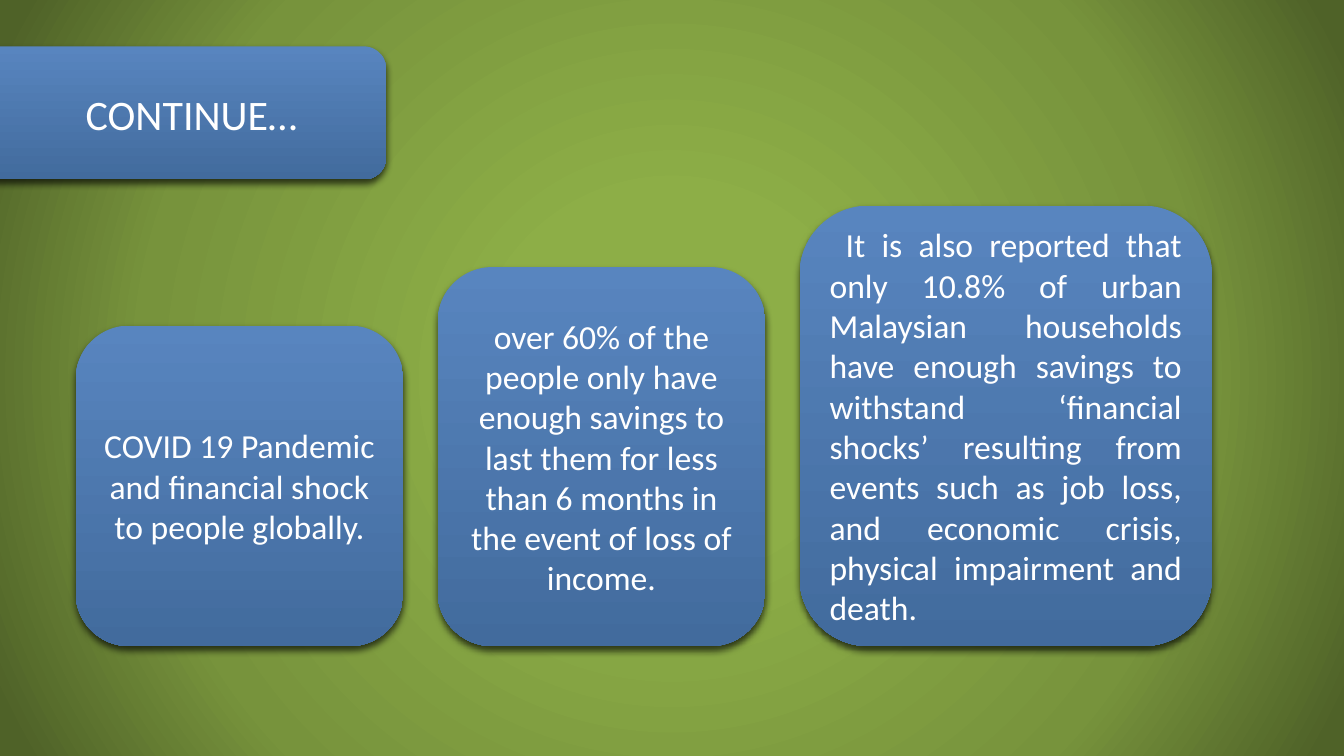
"""Build a slide of three rising cards on household savings and financial shock."""
from lxml import etree
from pptx import Presentation
from pptx.dml.color import RGBColor
from pptx.enum.shapes import MSO_SHAPE
from pptx.enum.text import MSO_ANCHOR, PP_ALIGN
from pptx.oxml import parse_xml
from pptx.oxml.ns import nsdecls, qn
from pptx.util import Inches, Pt

ROUNDED = MSO_SHAPE.ROUNDED_RECTANGLE
MIDDLE = MSO_ANCHOR.MIDDLE
LEFT, CENTER, JUSTIFY = PP_ALIGN.LEFT, PP_ALIGN.CENTER, PP_ALIGN.JUSTIFY

HEADING = "CONTINUE…"
CARDS = [
    {"text": "COVID 19 Pandemic and financial shock to people globally.",
     "width": 3.25, "height": 3.18, "align": CENTER, "indent": 0},
    {"text": "over 60% of the people only have enough savings to last them "
             "for less than 6 months in the event of loss of income.",
     "width": 3.25, "height": 3.76, "align": CENTER, "indent": 0},
    {"text": "It is also reported that only 10.8% of urban Malaysian households "
             "have enough savings to withstand ‘financial shocks’ resulting from "
             "events such as job loss, and economic crisis, physical impairment "
             "and death.",
     "width": 4.09, "height": 4.37, "align": JUSTIFY, "indent": 0.16},
]
THEME = {
    "font": "Calibri",
    "text": RGBColor.from_string("FFFFFF"),
    "heading_size": Pt(30),
    "card_size": Pt(24),
    "panel": ("5885BF", "426B9D"),
    "backdrop": ((0, "8DAE47"), (23, "8DAE47"), (69, "77933C"), (97, "4F6228")),
    "shadow": {"color": "000000", "opacity": 65, "blur": Pt(5), "distance": Pt(3)},
}
BANNER_BOX = (-0.34, 0.46, 4.17, 1.32)
HEADING_BOX = (0.75, 0.44, 3.35, 1.38)
CARDS_LEFT, CARDS_BOTTOM, CARD_GAP = 0.75, 6.41, 0.34


def paint_backdrop(slide):
    """Fill the background with a circular gradient from the centre."""
    slide.background.fill.solid()
    solid = slide.element.xpath("p:cSld/p:bg/p:bgPr/a:solidFill")[0]
    stops = "".join(
        f'<a:gs pos="{position * 1000}"><a:srgbClr val="{color}"/></a:gs>'
        for position, color in THEME["backdrop"])
    gradient = parse_xml(
        f'<a:gradFill {nsdecls("a")} rotWithShape="1"><a:gsLst>{stops}</a:gsLst>'
        '<a:path path="circle"><a:fillToRect l="50000" t="50000" r="50000" '
        'b="50000"/></a:path></a:gradFill>')
    solid.getparent().replace(solid, gradient)


def add_shadow(panel):
    """Give a panel a soft shadow straight below it."""
    panel.shadow.inherit = False
    shadow = THEME["shadow"]
    effects = panel.element.spPr.find(qn("a:effectLst"))
    outer = etree.SubElement(
        effects, qn("a:outerShdw"), blurRad=str(shadow["blur"]),
        dist=str(shadow["distance"]), dir="5400000", rotWithShape="0")
    color = etree.SubElement(outer, qn("a:srgbClr"), val=shadow["color"])
    etree.SubElement(color, qn("a:alpha"), val=str(shadow["opacity"] * 1000))


def add_panel(slide, box):
    """Add a shaded rounded panel."""
    panel = slide.shapes.add_shape(ROUNDED, *map(Inches, box))
    panel.line.fill.background()
    panel.fill.gradient()
    panel.fill.gradient_angle = 270
    for stop, color in zip(panel.fill.gradient_stops, THEME["panel"]):
        stop.color.rgb = RGBColor.from_string(color)
    add_shadow(panel)
    return panel


def write(holder, text, size, align, indent=0):
    """Write one formatted paragraph into a shape."""
    frame = holder.text_frame
    frame.text = text
    frame.word_wrap = True
    frame.vertical_anchor = MIDDLE
    paragraph = frame.paragraphs[0]
    paragraph.alignment = align
    if indent:
        paragraph._p.get_or_add_pPr().set("indent", str(Inches(indent)))
    font = paragraph.runs[0].font
    for name, value in {"name": THEME["font"], "size": size}.items():
        setattr(font, name, value)
    font.color.rgb = THEME["text"]


def add_heading(slide):
    """Place the heading over its banner."""
    title = slide.shapes.title
    banner = add_panel(slide, BANNER_BOX)
    title.element.addprevious(banner.element)
    for side, value in zip(("left", "top", "width", "height"), HEADING_BOX):
        setattr(title, side, Inches(value))
    write(title, HEADING, THEME["heading_size"], LEFT)


def add_cards(slide):
    """Set the cards side by side on a shared bottom edge."""
    left = CARDS_LEFT
    for card in CARDS:
        top = CARDS_BOTTOM - card["height"]
        panel = add_panel(slide, (left, top, card["width"], card["height"]))
        write(panel, card["text"], THEME["card_size"], card["align"], card["indent"])
        left += card["width"] + CARD_GAP


def main():
    """Create and save the presentation."""
    deck = Presentation()
    deck.slide_width, deck.slide_height = Inches(13.33), Inches(7.5)
    slide = deck.slides.add_slide(deck.slide_layouts[5])
    paint_backdrop(slide)
    add_heading(slide)
    add_cards(slide)
    deck.save("out.pptx")


if __name__ == "__main__":
    main()
